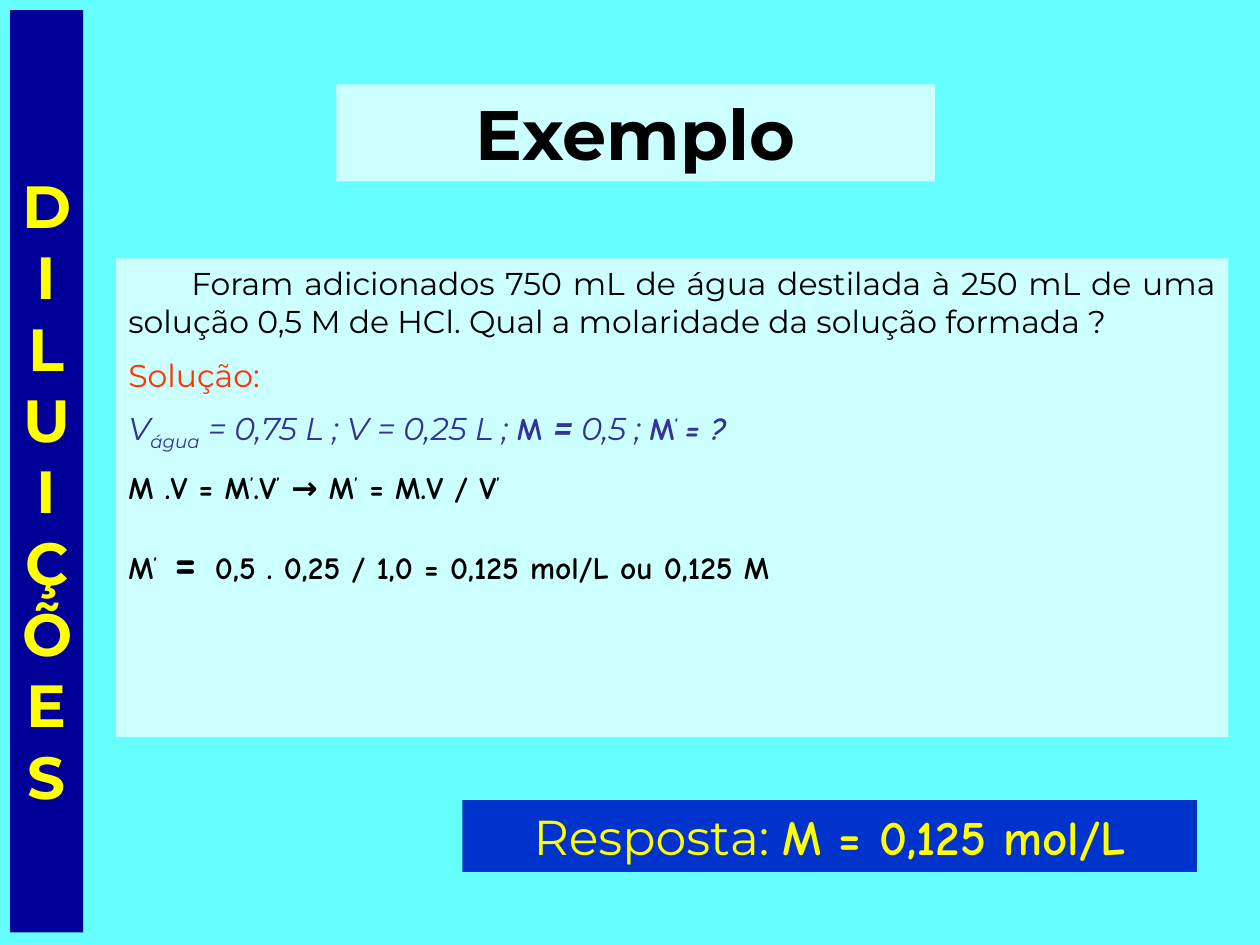
from dataclasses import dataclass

from pptx import Presentation
from pptx.dml.color import RGBColor as Color
from pptx.enum.shapes import MSO_SHAPE as Shape
from pptx.enum.text import MSO_ANCHOR as Anchor, PP_ALIGN as Align
from pptx.util import Inches, Pt


@dataclass(frozen=True)
class Theme:
    background: Color = Color.from_string("66FFFF")
    panel: Color = Color.from_string("CCFFFF")
    answer: Color = Color.from_string("0033CC")
    sidebar: Color = Color.from_string("000099")
    black: Color = Color.from_string("000000")
    red: Color = Color.from_string("FF3300")
    indigo: Color = Color.from_string("333399")
    yellow: Color = Color.from_string("FFFF00")
    title_size: Pt = Pt(40)
    sidebar_size: Pt = Pt(34)
    large_size: Pt = Pt(28)
    body_size: Pt = Pt(18)
    sans: str = "Montserrat"
    comic: str = "Comic Neue"


theme = Theme()
SUB, SUPER = -25000, 30000


def add_box(left, top, width, height, fill):
    """Add a plain filled rectangle and return its text frame."""
    shape = slide.shapes.add_shape(
        Shape.RECTANGLE, Inches(left), Inches(top), Inches(width), Inches(height))
    shape.shadow.inherit = False
    shape.fill.solid()
    shape.fill.fore_color.rgb = fill
    shape.line.fill.background()
    frame = shape.text_frame
    frame.word_wrap = True
    frame.vertical_anchor = Anchor.TOP
    return frame


def write(paragraph, runs, size, color, align, name=theme.sans, bold=False, italic=False):
    """Set the paragraph's font, then add (text, differences) runs."""
    paragraph.alignment = align
    font = paragraph.font
    font.size, font.name, font.bold, font.italic = size, name, bold, italic
    font.color.rgb = color
    for text, differences in runs:
        run = paragraph.add_run()
        run.text = text
        for key, value in differences.items():
            if key == "baseline":
                run._r.get_or_add_rPr().set("baseline", str(value))
            else:
                setattr(run.font, key, value)


presentation = Presentation()
presentation.slide_width, presentation.slide_height = Inches(10), Inches(7.5)
slide = presentation.slides.add_slide(presentation.slide_layouts[6])
slide.background.fill.solid()
slide.background.fill.fore_color.rgb = theme.background

# Title
title = add_box(2.67, 0.67, 4.75, 0.77, theme.panel)
write(title.paragraphs[0], [("Exemplo", {})], theme.title_size, theme.black,
      Align.CENTER, bold=True)

# Problem and worked solution: runs, colour, paragraph font, space before
plain = {}
prime = {"baseline": SUPER}
comic = {"name": theme.comic, "bold": True, "italic": False}
comic_font = {"name": theme.comic, "bold": True}
solution = [
    ([("\tForam adicionados 750 mL de água destilada à 250 mL de uma solução "
       "0,5 M de HCl. Qual a molaridade da solução formada ?", plain)],
     theme.black, {}, 0),
    ([("Solução:", plain)], theme.red, {}, 9),
    ([("V", plain), ("água", {"baseline": SUB}), (" = 0,75 L ; V = 0,25 L ; ", plain),
      ("M ", comic), ("= ", {"bold": True}), ("0,5 ; ", plain), ("M", comic),
      ("’ ", comic | prime), ("= ?", comic | {"italic": True})],
     theme.indigo, {"italic": True}, 9),
    ([("M .V = M", plain), ("’", prime), (".V", plain), ("’", prime),
      (" → M", plain), ("’", prime), (" = M.V / V", plain), ("’", prime)],
     theme.black, comic_font, 9),
    ([("M", plain), ("’", prime), (" = ", {"size": theme.large_size}),
      ("0,5 . 0,25 / 1,0 = 0,125 mol/L ou 0,125 M", plain)],
     theme.black, comic_font, 14),
]
body = add_box(0.92, 2.05, 8.83, 3.8, theme.panel)
for index, (runs, color, font, space) in enumerate(solution):
    paragraph = body.add_paragraph() if index else body.paragraphs[0]
    paragraph.space_before = Pt(space)
    write(paragraph, runs, theme.body_size, color, Align.JUSTIFY, **font)

# Answer
answer = add_box(3.67, 6.35, 5.83, 0.57, theme.answer)
write(answer.paragraphs[0], [("Resposta: ", plain), ("M = 0,125 mol/L", comic)],
      theme.large_size, theme.yellow, Align.CENTER)

# Sidebar: the narrow box wraps the word to one letter a line
sidebar = add_box(0.08, 0.08, 0.58, 7.32, theme.sidebar)
sidebar.margin_top = Inches(1.26)
write(sidebar.paragraphs[0], [("DILUIÇÕES", plain)], theme.sidebar_size,
      theme.yellow, Align.CENTER, bold=True)

presentation.save("out.pptx")
